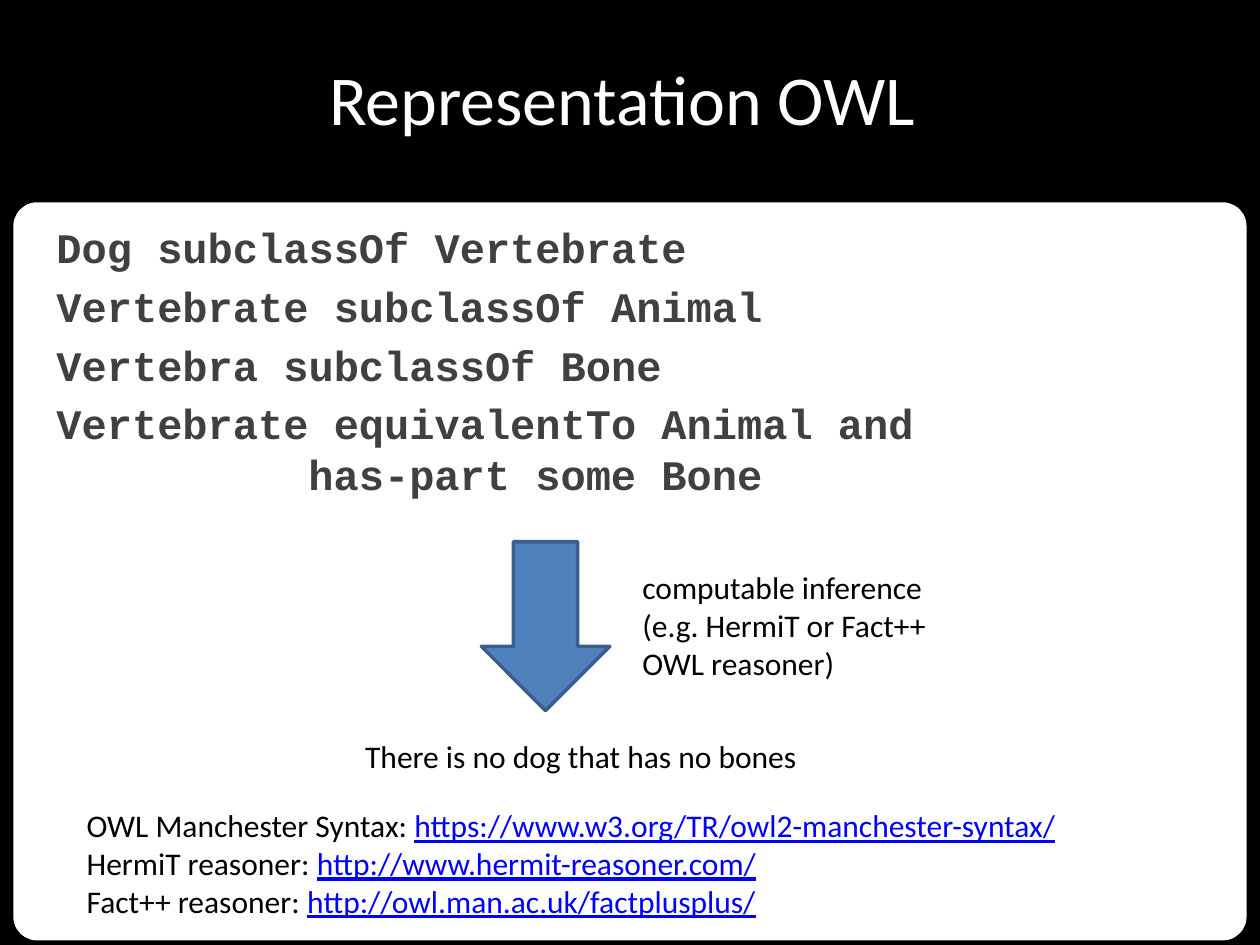
from lxml import etree
from pptx import Presentation
from pptx import util as u
from pptx.dml.color import RGBColor
from pptx.enum import shapes, text
from pptx.oxml import ns


def color(value):
    return RGBColor.from_string(value)


def write(shape, paragraphs, size, font="Calibri", fill="000000", bold=False):
    frame = shape.text_frame
    for index, runs in enumerate(paragraphs):
        paragraph = frame.paragraphs[0] if index == 0 else frame.add_paragraph()
        for content in runs:
            is_address = content.startswith("http")
            for number, line in enumerate(content.split("\n")):
                if number:
                    paragraph.add_line_break()
                run = paragraph.add_run()
                run.text = line
                run.font.name = font
                run.font.size = u.Pt(size)
                run.font.bold = bold
                run.font.underline = is_address
                run.font.color.rgb = color("0000FF" if is_address else fill)
    return frame


presentation = Presentation()
presentation.slide_width = u.Inches(10)
presentation.slide_height = u.Inches(7.5)
slide = presentation.slides.add_slide(presentation.slide_layouts[6])
slide.background.fill.solid()
slide.background.fill.fore_color.rgb = color("000000")

for kind, box, fill, line in [
    (shapes.MSO_SHAPE.ROUNDED_RECTANGLE, (0.12, 1.62, 9.76, 5.83), "FFFFFF", "FFFFFF"),
    (shapes.MSO_SHAPE.DOWN_ARROW, (3.82, 4.3, 1.02, 1.34), "4F81BD", "3A5F8C"),
]:
    shape = slide.shapes.add_shape(kind, *[u.Inches(length) for length in box])
    shape.shadow.inherit = False
    shape.fill.solid()
    shape.fill.fore_color.rgb = color(fill)
    shape.line.color.rgb = color(line)
    shape.line.width = u.Pt(2)
    if kind == shapes.MSO_SHAPE.ROUNDED_RECTANGLE:
        shape.adjustments[0] = 0.03

title = slide.shapes.add_textbox(0, 0, u.Inches(10), u.Inches(1.55))
title_frame = write(title, [["Representation OWL "]], 40, fill="FFFFFF")
title_frame.word_wrap = True
title_frame.vertical_anchor = text.MSO_ANCHOR.MIDDLE
title_frame.paragraphs[0].alignment = text.PP_ALIGN.CENTER

axioms = [
    ["Dog subclassOf Vertebrate"],
    ["Vertebrate subclassOf Animal"],
    ["Vertebra subclassOf Bone"],
    ["Vertebrate equivalentTo Animal and \n\t\thas-part some Bone"],
]
axiom_box = slide.shapes.add_textbox(u.Inches(0.35), u.Inches(1.71), u.Inches(9.53), u.Inches(5.5))
axiom_frame = write(axiom_box, axioms, 24, "Courier New", "404040", True)
axiom_frame.word_wrap = True
for paragraph in axiom_frame.paragraphs:
    paragraph.space_before = u.Pt(4.8)

properties = axiom_frame.paragraphs[-1]._p.get_or_add_pPr()
tab_list = etree.SubElement(properties, ns.qn("a:tabLst"))
for position in (1, 2):
    etree.SubElement(tab_list, ns.qn("a:tab"), pos=str(u.Inches(position)), algn="l")

references = [
    ["OWL Manchester Syntax: ", "https://www.w3.org/TR/owl2-manchester-syntax/"],
    ["HermiT reasoner: ", "http://www.hermit-reasoner.com/"],
    ["Fact++ reasoner: ", "http://owl.man.ac.uk/factplusplus/"],
]
for box, paragraphs, wrap in [
    ((0.59, 6.35, 8.64, 1.01), references, True),
    ((2.8, 5.8, 3.67, 0.4), [["There is no dog that has no bones"]], False),
    ((5, 4.46, 2.48, 1.01), [["computable inference\n(e.g. HermiT or Fact++\nOWL reasoner)"]], False),
]:
    note = slide.shapes.add_textbox(*[u.Inches(length) for length in box])
    frame = write(note, paragraphs, 18)
    frame.word_wrap = wrap
    frame.auto_size = text.MSO_AUTO_SIZE.SHAPE_TO_FIT_TEXT

presentation.save("out.pptx")
